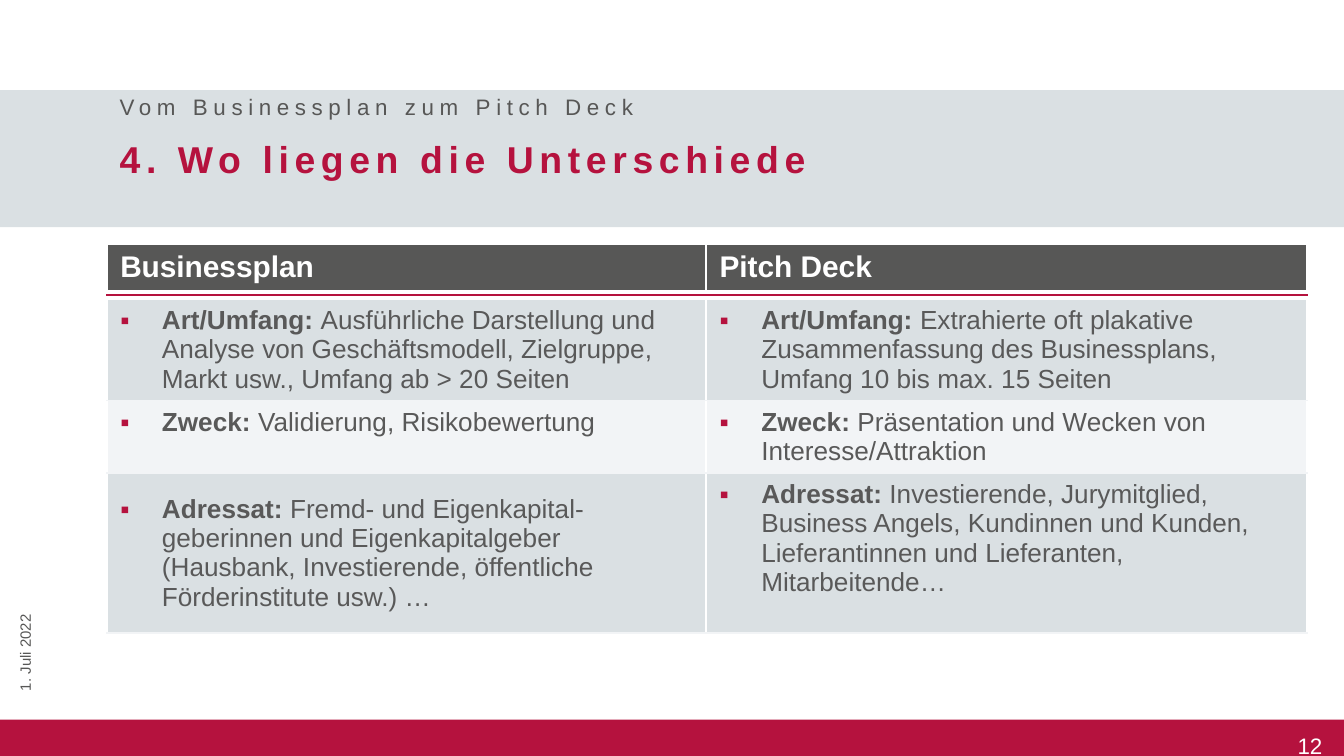
from dataclasses import dataclass

import lxml.etree
import pptx
import pptx.dml.color
import pptx.enum.shapes
import pptx.enum.text
import pptx.oxml.ns
import pptx.util

ALIGN = pptx.enum.text.PP_ALIGN
ANCHOR = pptx.enum.text.MSO_ANCHOR


@dataclass(frozen=True)
class Theme:
    font: str = "Arial"
    red: str = "B5123E"
    band: str = "DAE0E3"
    light: str = "F2F4F6"
    dark: str = "575756"
    text: str = "595959"
    white: str = "FFFFFF"
    title_size: int = 20
    header_size: int = 16
    table_size: int = 14
    small_size: int = 12
    date_size: int = 8
    gap_size: int = 1
    tracking: int = 3


def rgb(value):
    return pptx.dml.color.RGBColor.from_string(value)


def add_element(parent, tag, **attributes):
    return lxml.etree.SubElement(parent, pptx.oxml.ns.qn(tag), attributes)


class SlideBuilder:
    COLUMNS, ROWS = 100, 56.25

    def __init__(self, presentation, theme):
        self.theme = theme
        self.column = presentation.slide_width / self.COLUMNS
        self.row = presentation.slide_height / self.ROWS
        self.slide = presentation.slides.add_slide(presentation.slide_layouts[0])

    def box(self, left, top, width, height):
        return (round(left * self.column), round(top * self.row),
                round(width * self.column), round(height * self.row))

    def run(self, paragraph, text, size, color, bold=False, tracking=0):
        run = paragraph.add_run()
        run.text = text
        run.font.name = self.theme.font
        run.font.size = pptx.util.Pt(size)
        run.font.bold = bold
        run.font.color.rgb = rgb(color)
        if tracking:
            run.font._element.set("spc", str(tracking * 100))

    def rectangle(self, place, color):
        kind = pptx.enum.shapes.MSO_SHAPE.RECTANGLE
        shape = self.slide.shapes.add_shape(kind, *self.box(*place))
        shape.shadow.inherit = False
        shape.fill.solid()
        shape.fill.fore_color.rgb = rgb(color)
        shape.line.fill.background()

    def heading(self, index, place, text, size, color, bold=False):
        shape = self.slide.placeholders[index]
        shape.left, shape.top, shape.width, shape.height = self.box(*place)
        frame = shape.text_frame
        frame.auto_size = pptx.enum.text.MSO_AUTO_SIZE.NONE
        frame.vertical_anchor = ANCHOR.MIDDLE
        paragraph = frame.paragraphs[0]
        paragraph.alignment = ALIGN.LEFT
        paragraph.line_spacing = 1.0
        paragraph.space_before = pptx.util.Pt(0)
        self.run(paragraph, text, size, color, bold, self.theme.tracking)

    def label(self, place, text, size, color, rotation=0):
        shape = self.slide.shapes.add_textbox(*self.box(*place))
        shape.rotation = rotation
        shape.text_frame.word_wrap = True
        self.run(shape.text_frame.paragraphs[0], text, size, color)
        return shape.text_frame

    def page_number(self, place, text):
        frame = self.label(place, text, self.theme.small_size, self.theme.white)
        frame.margin_left = frame.margin_right = 0
        frame.margin_top = frame.margin_bottom = 0
        frame.vertical_anchor = ANCHOR.MIDDLE
        frame.paragraphs[0].alignment = ALIGN.RIGHT
        frame.paragraphs[0].line_spacing = pptx.util.Pt(28)

    def table(self, place, widths, heights):
        shape = self.slide.shapes.add_table(len(heights), len(widths), *self.box(*place))
        table = shape.table
        table.first_row = table.horz_banding = False
        for column, width in zip(table.columns, widths):
            column.width = round(width * self.column)
        for row, height in zip(table.rows, heights):
            row.height = round(height * self.row)
        return table

    def cell(self, cell, fill=None, anchor=ANCHOR.MIDDLE, **borders):
        cell.vertical_anchor = anchor
        properties = cell._tc.get_or_add_tcPr()
        for side in ("L", "R", "T", "B"):
            if side in borders:
                line = add_element(properties, f"a:ln{side}", w="12700",
                                   cap="flat", cmpd="sng", algn="ctr")
                solid = add_element(line, "a:solidFill")
                add_element(solid, "a:srgbClr", val=borders[side])
                add_element(line, "a:prstDash", val="solid")
        if fill:
            cell.fill.solid()
            cell.fill.fore_color.rgb = rgb(fill)
        else:
            cell.fill.background()
        return cell.text_frame.paragraphs[0]

    def header_cell(self, cell, text, **borders):
        paragraph = self.cell(cell, self.theme.dark, **borders)
        self.run(paragraph, text, self.theme.header_size, self.theme.white, True)

    def gap_cell(self, cell, **borders):
        cell.margin_top = cell.margin_bottom = 0
        paragraph = self.cell(cell, **borders)
        add_element(paragraph._p, "a:endParaRPr", sz=str(self.theme.gap_size * 100))

    def bullet_cell(self, cell, topic, text, fill, anchor, **borders):
        paragraph = self.cell(cell, fill, anchor, **borders)
        properties = paragraph._p.get_or_add_pPr()
        indent = pptx.util.Inches(0.31)
        properties.set("marL", str(indent))
        properties.set("indent", str(-indent))
        color = add_element(properties, "a:buClr")
        add_element(color, "a:srgbClr", val=self.theme.red)
        add_element(properties, "a:buFont", typeface=self.theme.font)
        add_element(properties, "a:buChar", char="▪")
        self.run(paragraph, f"{topic}: ", self.theme.table_size, self.theme.text, True)
        self.run(paragraph, text, self.theme.table_size, self.theme.text)


HEADERS = ("Businessplan", "Pitch Deck")
COMPARISON = (
    ("Art/Umfang", (
        ("Ausführliche Darstellung und Analyse von Geschäftsmodell, Zielgruppe, "
         "Markt usw., Umfang ab > 20 Seiten", ANCHOR.MIDDLE),
        ("Extrahierte oft plakative Zusammenfassung des Businessplans, "
         "Umfang 10 bis max. 15 Seiten", ANCHOR.MIDDLE))),
    ("Zweck", (
        ("Validierung, Risikobewertung", ANCHOR.TOP),
        ("Präsentation und Wecken von Interesse/Attraktion", ANCHOR.MIDDLE))),
    ("Adressat", (
        ("Fremd- und Eigenkapital-geberinnen und Eigenkapitalgeber "
         "(Hausbank, Investierende, öffentliche Förderinstitute usw.) …", ANCHOR.MIDDLE),
        ("Investierende, Jurymitglied, Business Angels, Kundinnen und Kunden, "
         "Lieferantinnen und Lieferanten, Mitarbeitende…", ANCHOR.TOP))),
)


def add_comparison(builder):
    theme = builder.theme
    heights = (3.5, 0.3, 0.3, 7.5, 5.4, 11.9)
    table = builder.table((7.95, 18.15, 89.3, sum(heights)), (44.6, 44.7), heights)
    for column, header in enumerate(HEADERS):
        divider = {"L" if column else "R": theme.white}
        builder.header_cell(table.cell(0, column), header, **divider)
        builder.gap_cell(table.cell(1, column), B=theme.red)
        builder.gap_cell(table.cell(2, column), T=theme.red)
        for index, (topic, entries) in enumerate(COMPARISON):
            text, anchor = entries[column]
            fill = theme.light if index % 2 else theme.band
            borders = divider | {"B": theme.light}
            if index:
                borders["T"] = theme.light
            builder.bullet_cell(table.cell(3 + index, column), topic, text,
                                fill, anchor, **borders)


def main():
    presentation = pptx.Presentation()
    presentation.slide_width = pptx.util.Inches(10)
    presentation.slide_height = pptx.util.Pt(405)
    theme = Theme()
    builder = SlideBuilder(presentation, theme)
    shapes = builder.slide.shapes._spTree
    placeholders = [shape._element for shape in builder.slide.placeholders]
    builder.rectangle((0, 53.55, 100, 2.7), theme.red)
    builder.page_number((85.8, 52.6, 12.6, 3.9), "12")
    builder.rectangle((0, 6.7, 100, 10.2), theme.band)
    shapes.extend(placeholders)
    builder.heading(0, (7.9, 9.6, 92.1, 4.4), "4. Wo liegen die Unterschiede",
                    theme.title_size, theme.red, True)
    builder.heading(1, (7.9, 7.15, 92.1, 1.5), "Vom Businessplan zum Pitch Deck",
                    theme.small_size, theme.dark)
    add_comparison(builder)
    builder.label((-4.2, 45.1, 12.2, 2.4), "1. Juli 2022", theme.date_size, theme.dark, 270)
    presentation.save("out.pptx")


if __name__ == "__main__":
    main()
